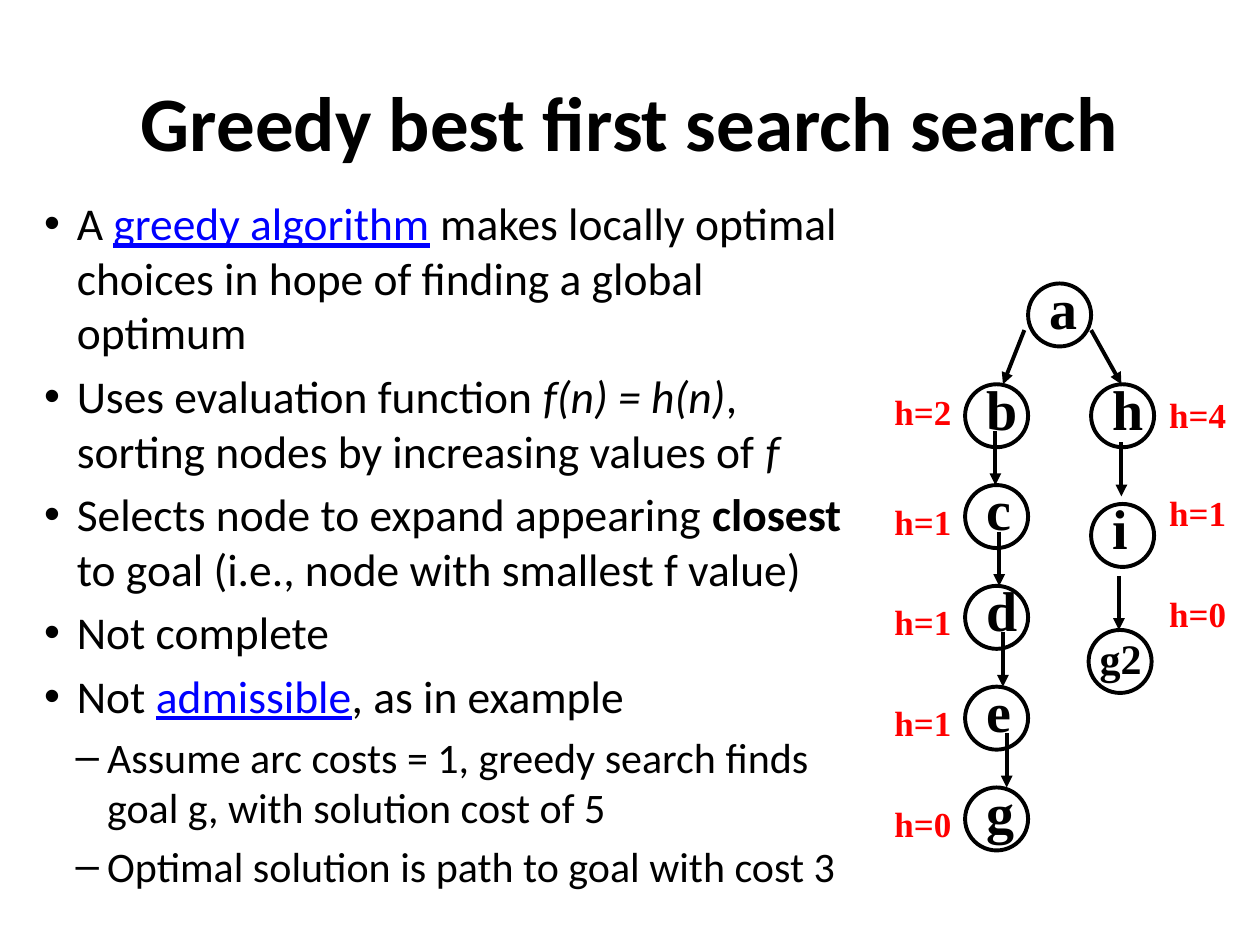
"""Build a slide on greedy best first search with its search tree."""
import pptx
import pptx.dml.color
import pptx.enum.dml
import pptx.enum.shapes
import pptx.enum.text
import pptx.oxml.ns
import pptx.util
import lxml.etree

BLACK = pptx.dml.color.RGBColor(0, 0, 0)
RED = pptx.dml.color.RGBColor(255, 0, 0)
BLUE = pptx.dml.color.RGBColor(0, 0, 255)
SANS = "Calibri"
SERIF = "Times New Roman"
COLS, ROWS = 20, 15

TEXT = [
    (0, [("A ", {}), ("greedy algorithm", {"color": BLUE, "under": True}),
         (" makes locally optimal choices in hope of finding a global optimum", {})]),
    (0, [("Uses evaluation function ", {}), ("f(n) = h(n)", {"slant": True}),
         (", sorting nodes by increasing values of ", {}), ("f", {"slant": True})]),
    (0, [("Selects node to expand appearing ", {}), ("closest", {"bold": True}),
         (" to goal (i.e., node with smallest f value)", {})]),
    (0, [("Not complete", {})]),
    (0, [("Not ", {}), ("admissible", {"color": BLUE, "under": True}),
         (", as in example", {})]),
    (1, [("Assume arc costs = 1, greedy search finds goal g, with solution cost of 5", {})]),
    (1, [("Optimal solution is path to goal with cost 3", {})]),
]
LEVELS = [(26, 0.26, -0.26), (24, 0.5, -0.25)]


def write(para, text, font=SANS, size=26, color=BLACK, bold=False, slant=False, under=False):
    """Add a formatted run to a paragraph."""
    run = para.add_run()
    run.text = text
    face = run.font
    face.name, face.size = font, pptx.util.Pt(size)
    face.bold, face.italic, face.underline = bold, slant, under
    face.color.rgb = color


class Deck:
    """Hold the style and the current slide, placed on a grid of columns and rows."""

    def __init__(self):
        """Start a file with one slide and a group for the tree."""
        self.file = pptx.Presentation()
        self.file.slide_width = pptx.util.Inches(10)
        self.file.slide_height = pptx.util.Inches(7.5)
        self.slide = self.file.slides.add_slide(self.file.slide_layouts[1])
        self.tree = self.slide.shapes.add_group_shape().shapes
        self.line = pptx.util.Pt(2.25)

    def grid(self, *spans):
        """Turn column and row pairs into slide lengths."""
        width, height = self.file.slide_width, self.file.slide_height
        return [round(span * (height / ROWS if place % 2 else width / COLS))
                for place, span in enumerate(spans)]

    def move(self, shape, *spans):
        """Set the place and size of a shape."""
        shape.left, shape.top, shape.width, shape.height = self.grid(*spans)

    def title(self, text):
        """Fill the title placeholder."""
        shape = self.slide.shapes.title
        self.move(shape, 1.5, 0.66, 17, 2.5)
        write(shape.text_frame.paragraphs[0], text, size=44, bold=True)

    def body(self, items):
        """Fill the body placeholder with a list of two levels."""
        shape = self.slide.placeholders[1]
        self.move(shape, 0.5, 3, 13.34, 11.5)
        frame = shape.text_frame
        frame.auto_size = pptx.enum.text.MSO_AUTO_SIZE.NONE
        for place, (level, runs) in enumerate(items):
            para = frame.add_paragraph() if place else frame.paragraphs[0]
            size, left, hang = LEVELS[level]
            para.level = level
            props = para._p.get_or_add_pPr()
            props.set("marL", str(pptx.util.Inches(left)))
            props.set("indent", str(pptx.util.Inches(hang)))
            for text, style in runs:
                write(para, text, size=size, **style)

    def label(self, text, *spans, **style):
        """Add one unwrapped bold line of text."""
        frame = self.tree.add_textbox(*self.grid(*spans)).text_frame
        frame.word_wrap = False
        frame.auto_size = pptx.enum.text.MSO_AUTO_SIZE.SHAPE_TO_FIT_TEXT
        write(frame.paragraphs[0], text, font=SERIF, bold=True, **style)

    def node(self, name, col, row, wide):
        """Add a ring with its name."""
        oval = pptx.enum.shapes.MSO_SHAPE.OVAL
        ring = self.tree.add_shape(oval, *self.grid(col, row, 1, 1))
        ring.shadow.inherit = False
        ring.fill.background()
        ring.line.color.rgb, ring.line.width = BLACK, self.line
        if len(name) > 1:
            self.label(name, col - 0.02, row - 0.06, wide, 1, size=24)
        else:
            self.label(name, col + 0.14, row - 0.26, wide, 1.26, size=32)

    def arrow(self, col, row, shift=0):
        """Add an arrow that runs down from a point."""
        kind = pptx.enum.shapes.MSO_CONNECTOR.STRAIGHT
        edge = self.tree.add_connector(kind, *self.grid(col, row, col + shift, row + 0.86))
        edge.line.color.rgb, edge.line.width = BLACK, self.line
        name = pptx.oxml.ns.qn
        lxml.etree.SubElement(edge.line._get_or_add_ln(), name("a:tailEnd"), type="triangle")
        lxml.etree.SubElement(edge._element.spPr, name("a:effectLst"))

    def cost(self, value, col, row):
        """Add the red estimate beside a node."""
        self.label(f"h={value}", col, row, 1.3, 0.86, size=20, color=RED)


def main():
    """Build and save the slide."""
    deck = Deck()
    deck.title("Greedy best first search search")
    deck.body(TEXT)
    top, step = 6.1, 1.6
    deck.node("a", 16.32, 4.5, 0.84)
    chain = [("b", 0.9), ("c", 0.8), ("d", 0.9), ("e", 0.8), ("g", 0.84)]
    for place, (name, wide) in enumerate(chain):
        deck.node(name, 15.32, top + step * place, wide)
    for name, col, row, wide in [("h", 17.32, top, 0.9), ("i", 17.32, 8, 0.64),
                                 ("g2", 17.28, 10, 1.06)]:
        deck.node(name, col, row, wide)
    deck.arrow(16.26, 5.24, -0.34)
    deck.arrow(17.32, 5.24, 0.48)
    for place in range(len(chain) - 1):
        deck.arrow(15.8 + 0.06 * place, 6.84 + step * place)
    deck.arrow(17.8, 7.02)
    deck.arrow(17.76, 9.14)
    deck.cost(2, 14, top)
    for place, value in enumerate([1, 1, 1, 0]):
        deck.cost(value, 14, 7.84 + step * place)
    for value, row in [(4, 6.14), (1, 7.7), (0, 9.3)]:
        deck.cost(value, 18.36, row)
    deck.file.save("out.pptx")


if __name__ == "__main__":
    main()
